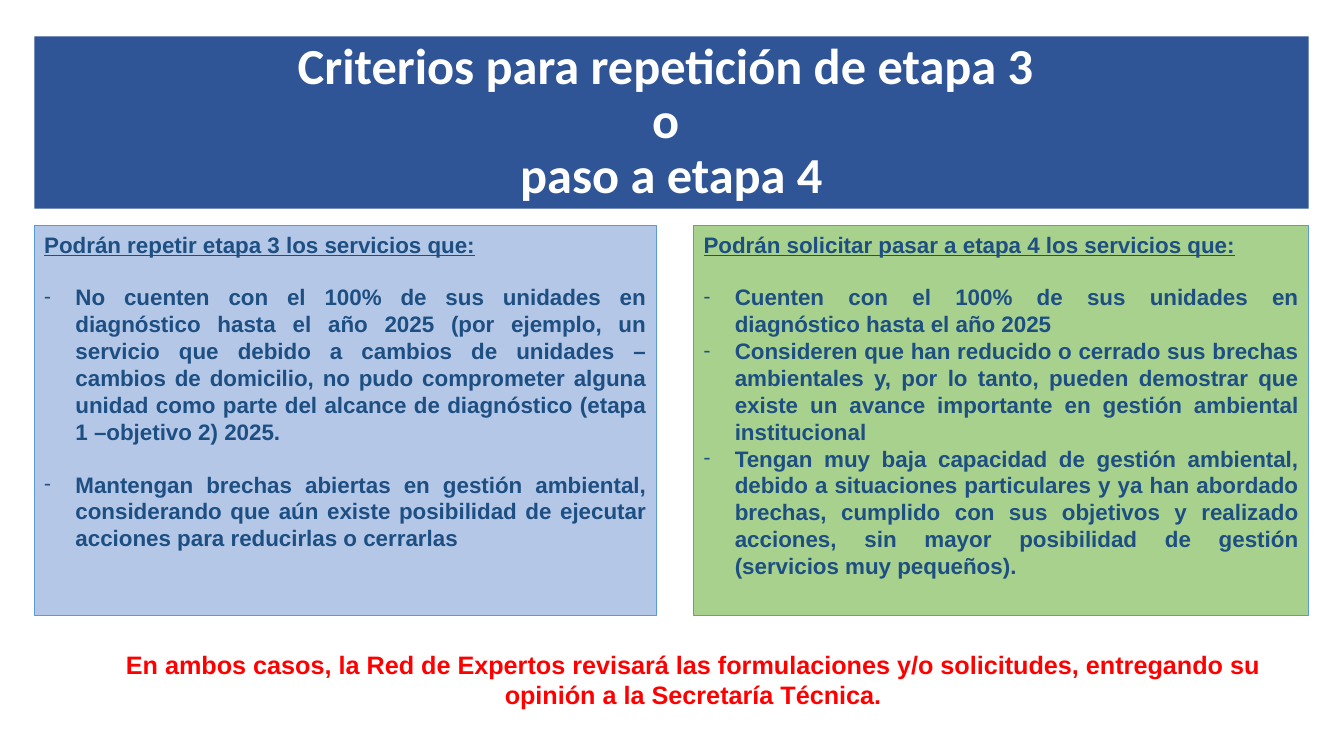
"""Build the slide on criteria for repeating stage 3 or moving to stage 4."""
from dataclasses import dataclass

from lxml import etree
from pptx import Presentation
from pptx import util as u
from pptx.dml.color import RGBColor
from pptx.enum import shapes, text
from pptx.oxml import ns

PX = 9144


@dataclass(frozen=True)
class Theme:
    banner: str = "2F5597"
    repeat: str = "B4C7E7"
    advance: str = "A9D18E"
    border: str = "5B9BD5"
    ink: str = "1D4F83"
    notice: str = "FF0000"
    white: str = "FFFFFF"
    title_font: str = "Calibri"
    body_font: str = "Arial"
    title_size: int = 36
    body_size: int = 16
    notice_size: int = 18
    line_gap: float = 18.5


@dataclass(frozen=True)
class Box:
    left: int
    top: int
    width: int
    height: int


@dataclass(frozen=True)
class Panel:
    box: Box
    fill: str
    heading: str
    criteria: tuple[str, ...]
    criteria_gap: float = 0


THEME = Theme()
BANNER = Box(34, 36, 1264, 171)
NOTICE = Box(78, 639, 1219, 71)
INDENT = 31

PANELS = (
    Panel(
        Box(34, 224, 617, 387), THEME.repeat,
        "Podrán repetir etapa 3 los servicios que:",
        (
            "No cuenten con el 100% de sus unidades en diagnóstico hasta el año 2025 "
            "(por ejemplo, un servicio que debido a cambios de unidades – cambios de "
            "domicilio, no pudo comprometer alguna unidad como parte del alcance de "
            "diagnóstico (etapa 1 –objetivo 2) 2025.",
            "Mantengan brechas abiertas en gestión ambiental, considerando que aún "
            "existe posibilidad de ejecutar acciones para reducirlas o cerrarlas",
        ),
        criteria_gap=THEME.line_gap,
    ),
    Panel(
        Box(688, 224, 610, 387), THEME.advance,
        "Podrán solicitar pasar a etapa 4 los servicios que:",
        (
            "Cuenten con el 100% de sus unidades en diagnóstico hasta el año 2025",
            "Consideren que han reducido o cerrado sus brechas ambientales y, por lo "
            "tanto, pueden demostrar que existe un avance importante en gestión "
            "ambiental institucional",
            "Tengan muy baja capacidad de gestión ambiental, debido a situaciones "
            "particulares y ya han abordado brechas, cumplido con sus objetivos y "
            "realizado acciones, sin mayor posibilidad de gestión (servicios muy "
            "pequeños).",
        ),
    ),
)


def px(length: int) -> u.Emu:
    """Turn px into EMU."""
    return u.Emu(length * PX)


def place(box: Box) -> tuple[u.Emu, ...]:
    """Give a box's position and size in EMU."""
    return px(box.left), px(box.top), px(box.width), px(box.height)


def add_block(slide, box: Box, fill: str, border: str | None = None):
    """Draw a filled rectangle and return its text frame."""
    block = slide.shapes.add_shape(shapes.MSO_SHAPE.RECTANGLE, *place(box))
    block.shadow.inherit = False
    block.fill.solid()
    block.fill.fore_color.rgb = RGBColor.from_string(fill)
    if border:
        block.line.color.rgb = RGBColor.from_string(border)
        block.line.width = u.Pt(0.75)
    else:
        block.line.fill.background()
    block.text_frame.word_wrap = True
    return block.text_frame


def add_dash(paragraph) -> None:
    """Give a paragraph a hanging dash bullet."""
    properties = paragraph._p.get_or_add_pPr()
    properties.set("marL", str(px(INDENT)))
    properties.set("indent", str(-px(INDENT)))
    font = etree.SubElement(properties, ns.qn("a:buFont"))
    font.set("typeface", THEME.title_font)
    etree.SubElement(properties, ns.qn("a:buChar")).set("char", "-")


def write(frame, wording: str, *, size: int, color: str, font: str = THEME.body_font,
          align=text.PP_ALIGN.CENTER, underline: bool = False, dash: bool = False,
          before: float = 0, spacing: float | None = None) -> None:
    """Write one bold paragraph, using the frame's first one while it is empty."""
    first = frame.paragraphs[0]
    paragraph = frame.add_paragraph() if first.text else first
    paragraph.text = wording
    paragraph.alignment = align
    if spacing:
        paragraph.line_spacing = spacing
    if before:
        paragraph.space_before = u.Pt(before)
    if dash:
        add_dash(paragraph)
    paragraph.font.name = font
    paragraph.font.size = u.Pt(size)
    paragraph.font.bold = True
    paragraph.font.underline = underline
    paragraph.font.color.rgb = RGBColor.from_string(color)


def add_panel(slide, panel: Panel) -> None:
    """Draw a panel with its heading and criteria."""
    frame = add_block(slide, panel.box, panel.fill, THEME.border)
    frame.vertical_anchor = text.MSO_ANCHOR.TOP
    style = dict(size=THEME.body_size, color=THEME.ink, align=text.PP_ALIGN.JUSTIFY)
    write(frame, panel.heading, underline=True, **style)
    for index, criterion in enumerate(panel.criteria):
        gap = panel.criteria_gap if index else THEME.line_gap
        write(frame, criterion, dash=True, before=gap, **style)


def main() -> None:
    """Build and save the slide."""
    deck = Presentation()
    deck.slide_width, deck.slide_height = px(1333), px(750)
    slide = deck.slides.add_slide(deck.slide_layouts[6])

    banner = add_block(slide, BANNER, THEME.banner)
    banner.vertical_anchor = text.MSO_ANCHOR.MIDDLE
    write(banner, "Criterios para repetición de etapa 3 \vo \vpaso a etapa 4",
          size=THEME.title_size, color=THEME.white, font=THEME.title_font, spacing=0.9)

    for panel in PANELS:
        add_panel(slide, panel)

    notice = slide.shapes.add_textbox(*place(NOTICE)).text_frame
    notice.word_wrap = True
    write(notice, "En ambos casos, la Red de Expertos revisará las formulaciones y/o "
          "solicitudes, entregando su opinión a la Secretaría Técnica.",
          size=THEME.notice_size, color=THEME.notice)
    deck.save("out.pptx")


if __name__ == "__main__":
    main()
